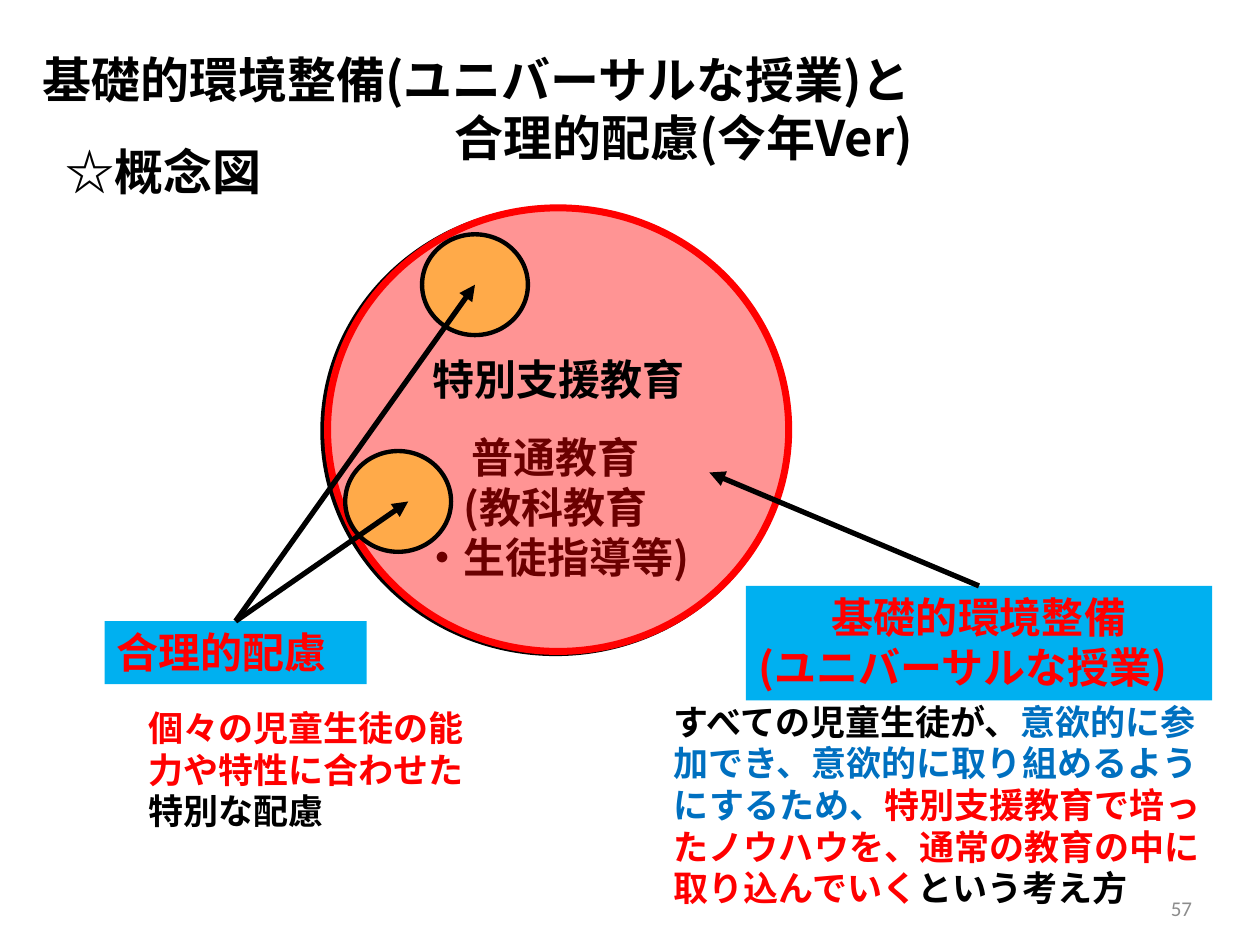
from lxml import etree
from pptx import Presentation
from pptx.dml.color import RGBColor
from pptx.enum.shapes import MSO_CONNECTOR, MSO_SHAPE
from pptx.enum.text import MSO_ANCHOR as ANCHOR, PP_ALIGN as ALIGN
from pptx.oxml.ns import qn
from pptx.util import Inches, Pt

COLORS = {
    "black": "000000",
    "red": "FF0000",
    "orange": "FFC000",
    "label": "00B0F0",
    "blue": "0070C0",
    "grey": "8C8C8C",
}
JAPANESE = "Noto Sans CJK JP"
LINE_RATIO = 1.19


def rgb(name):
    return RGBColor.from_string(COLORS[name])


def write(shape, paragraphs, size=24, color="black", font=JAPANESE, bold=True,
          aligns=(ALIGN.LEFT,), anchor=ANCHOR.TOP, wrap=True, inset_top=0.05, indents=(0,)):
    frame = shape.text_frame
    frame.word_wrap = wrap
    frame.vertical_anchor = anchor
    frame.margin_top = Inches(inset_top)
    for index, content in enumerate(paragraphs):
        paragraph = frame.paragraphs[0] if index == 0 else frame.add_paragraph()
        paragraph.alignment = aligns[min(index, len(aligns) - 1)]
        paragraph.line_spacing = Pt(round(size * LINE_RATIO, 1))
        indent = indents[min(index, len(indents) - 1)]
        if indent:
            paragraph._p.get_or_add_pPr().set("marL", str(Inches(indent)))
        runs = [(content, color)] if isinstance(content, str) else content
        for text, run_color in runs:
            run = paragraph.add_run()
            run.text = text
            run.font.size = Pt(size)
            run.font.bold = bold
            run.font.name = font
            run.font.color.rgb = rgb(run_color)
            east_asian = etree.SubElement(run._r.get_or_add_rPr(), qn("a:ea"))
            east_asian.set("typeface", font)


def add_text(slide, box, paragraphs, **text_format):
    write(slide.shapes.add_textbox(*map(Inches, box)), paragraphs, **text_format)


def add_figure(slide, kind, box, fill=None, opacity=100, line=None, weight=2.5):
    figure = slide.shapes.add_shape(kind, *map(Inches, box))
    figure.shadow.inherit = False
    if fill:
        figure.fill.solid()
        figure.fill.fore_color.rgb = rgb(fill)
        if opacity < 100:
            shade = figure.fill._xPr.find(qn("a:solidFill"))[0]
            etree.SubElement(shade, qn("a:alpha")).set("val", str(opacity * 1000))
    else:
        figure.fill.background()
    if line:
        figure.line.color.rgb = rgb(line)
        figure.line.width = Pt(weight)
    else:
        figure.line.fill.background()
    return figure


def add_arrow(slide, label, target):
    start = label.left + label.width // 2, label.top
    arrow = slide.shapes.add_connector(MSO_CONNECTOR.STRAIGHT, *start, *map(Inches, target))
    arrow.begin_connect(label, 0)
    arrow.line.color.rgb = rgb("black")
    arrow.line.width = Pt(3)
    etree.SubElement(arrow.line._get_or_add_ln(), qn("a:tailEnd")).set("type", "triangle")
    etree.SubElement(arrow._element.spPr, qn("a:effectLst"))


def build_heading(slide, box):
    left, top, width, height = box
    add_text(slide, (left, top, width, 1.04),
             ["基礎的環境整備(ユニバーサルな授業)と", "合理的配慮(今年Ver)"],
             size=28, indents=(0, 3.27))
    add_text(slide, (left + 0.18, top + 0.73, 1.78, 0.57), ["☆概念図"], size=28, wrap=False)


def build_education_circles(slide, box):
    left, top, width, height = box
    general = add_figure(slide, MSO_SHAPE.OVAL, box, line="black")
    write(general, ["普通教育", "(教科教育", "・生徒指導等)"],
          aligns=(ALIGN.CENTER,), anchor=ANCHOR.BOTTOM)
    special = add_figure(slide, MSO_SHAPE.OVAL, (left + 0.04, top, width - 0.04, height - 0.02),
                         fill="red", opacity=42, line="red", weight=4)
    write(special, ["特別支援教育"], aligns=(ALIGN.CENTER,), inset_top=0.64)
    for across, down in ((0.18, 1.93), (0.79, 0.21)):
        add_figure(slide, MSO_SHAPE.OVAL, (left + across, top + down, 0.84, 0.8),
                   fill="orange", opacity=50, line="black")


def build_environment(slide, box, target):
    left, top, width, height = box
    label = add_figure(slide, MSO_SHAPE.RECTANGLE, (left + 0.67, top, 3.7, 0.91), fill="label")
    write(label, ["基礎的環境整備", "(ユニバーサルな授業)"], color="red",
          aligns=(ALIGN.CENTER, ALIGN.LEFT))
    add_arrow(slide, label, target)
    add_text(slide, (left, top + 0.86, width, height - 0.86), [[
        ("すべての児童生徒が、", "black"),
        ("意欲的に参加でき、意欲的に取り組めるようにするため、", "blue"),
        ("特別支援教育で培ったノウハウを、通常の教育の中に取り込んでいく", "red"),
        ("という考え方", "black"),
    ]], size=20)


def build_accommodation(slide, box, targets):
    left, top, width, height = box
    label = add_figure(slide, MSO_SHAPE.RECTANGLE, (left, top, 2.08, 0.5), fill="label")
    write(label, ["合理的配慮"], color="red")
    for target in targets:
        add_arrow(slide, label, target)
    add_text(slide, (left + 0.25, top + 0.63, width - 0.25, height - 0.63), [[
        ("個々の児童生徒の能力や特性に合わせた", "red"),
        ("特別な配慮", "black"),
    ]], size=20)


def build_page_number(slide, box):
    add_text(slide, box, ["57"], size=12, color="grey", font="Calibri", bold=False,
             aligns=(ALIGN.RIGHT,), anchor=ANCHOR.MIDDLE)


def main():
    presentation = Presentation()
    presentation.slide_width = Inches(10)
    presentation.slide_height = Inches(7.5)
    slide = presentation.slides.add_slide(presentation.slide_layouts[6])
    build_education_circles(slide, (2.56, 1.65, 3.7, 3.54))
    build_environment(slide, (5.25, 4.65, 4.57, 2.64), target=(5.63, 3.75))
    build_accommodation(slide, (0.83, 4.93, 3.04, 1.74), targets=((3.77, 2.26), (3.24, 3.98)))
    build_heading(slide, (0.24, 0.35, 9.01, 1.3))
    build_page_number(slide, (7.03, 7.01, 2.53, 0.4))
    presentation.save("out.pptx")


if __name__ == "__main__":
    main()
